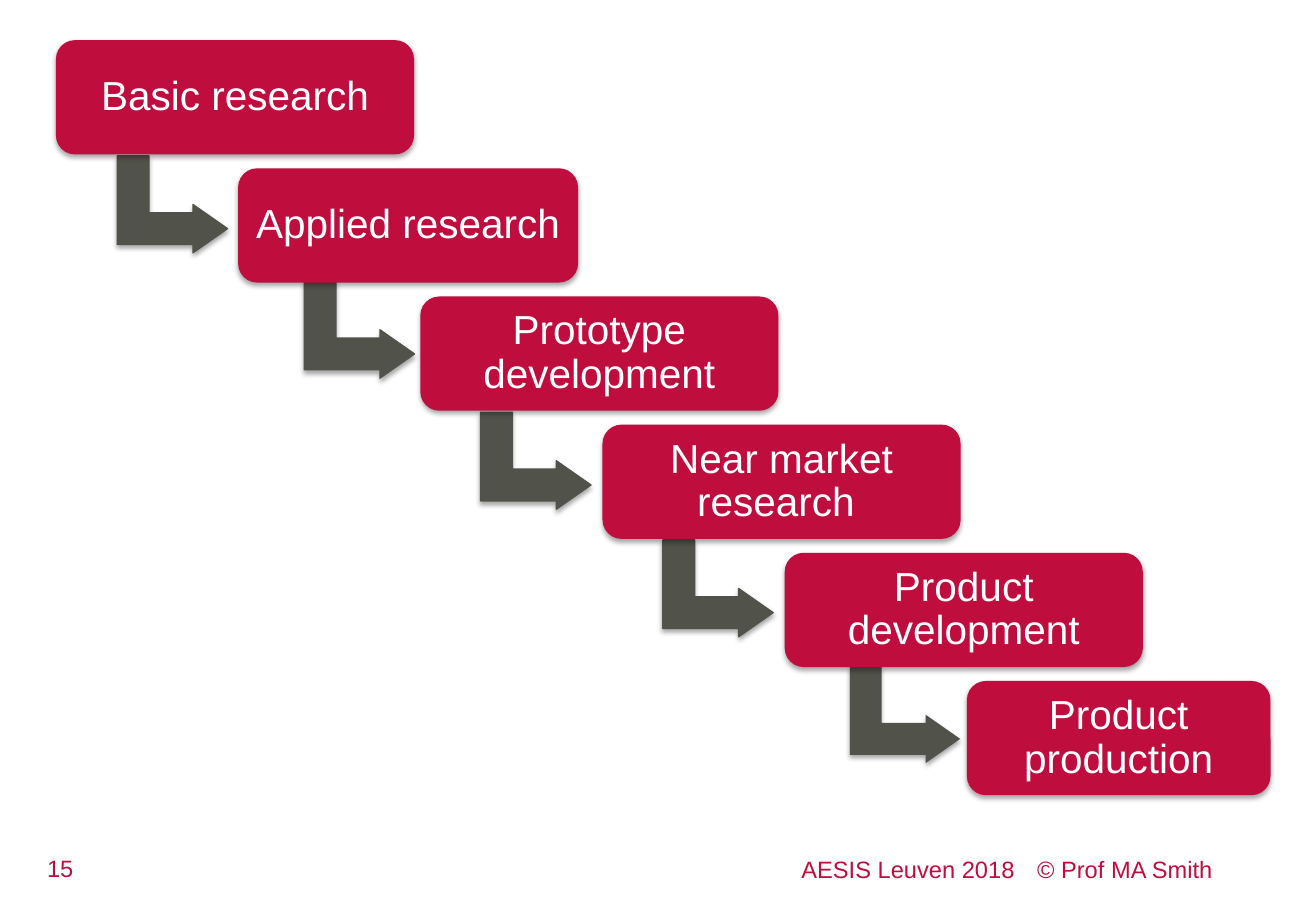
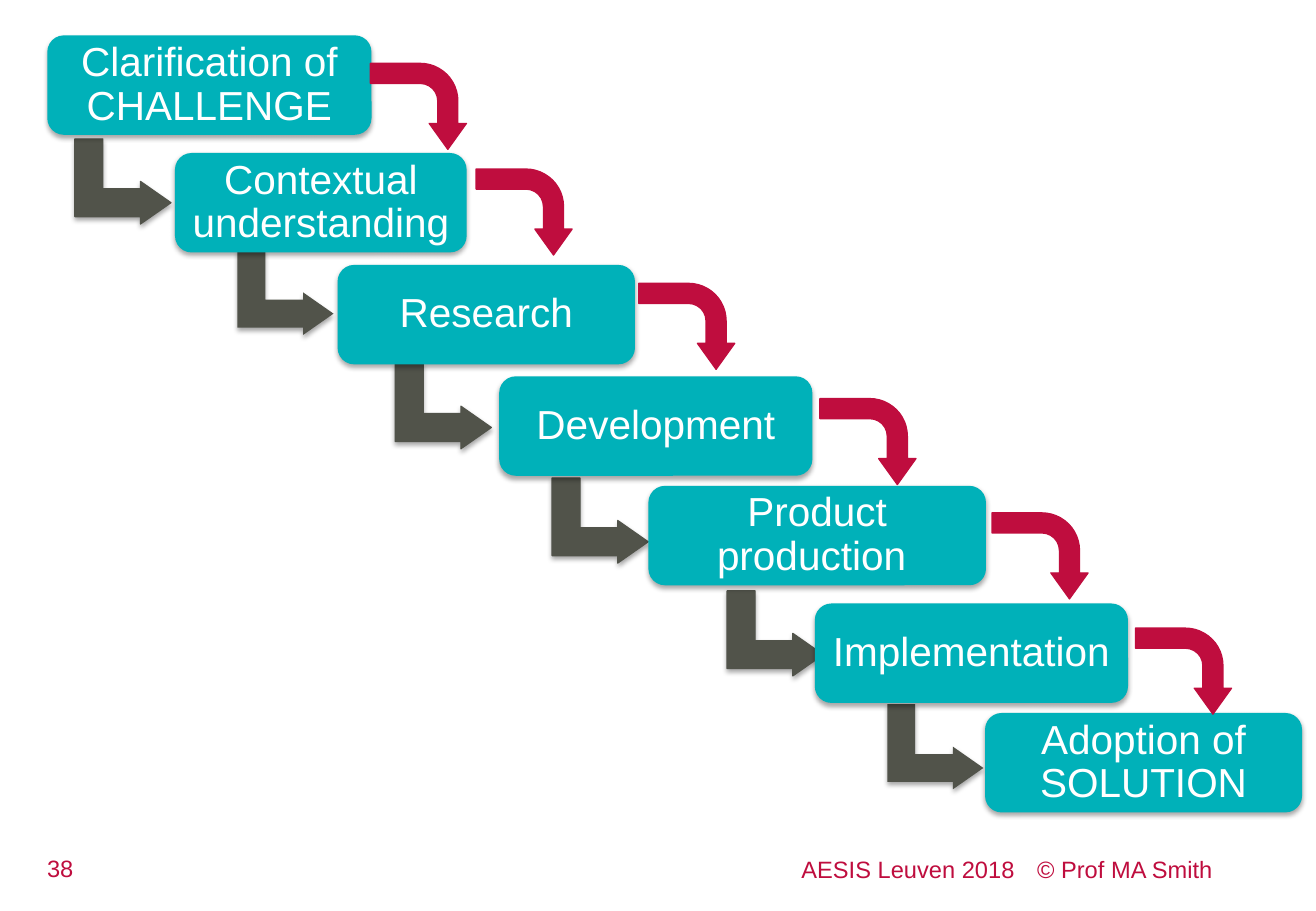
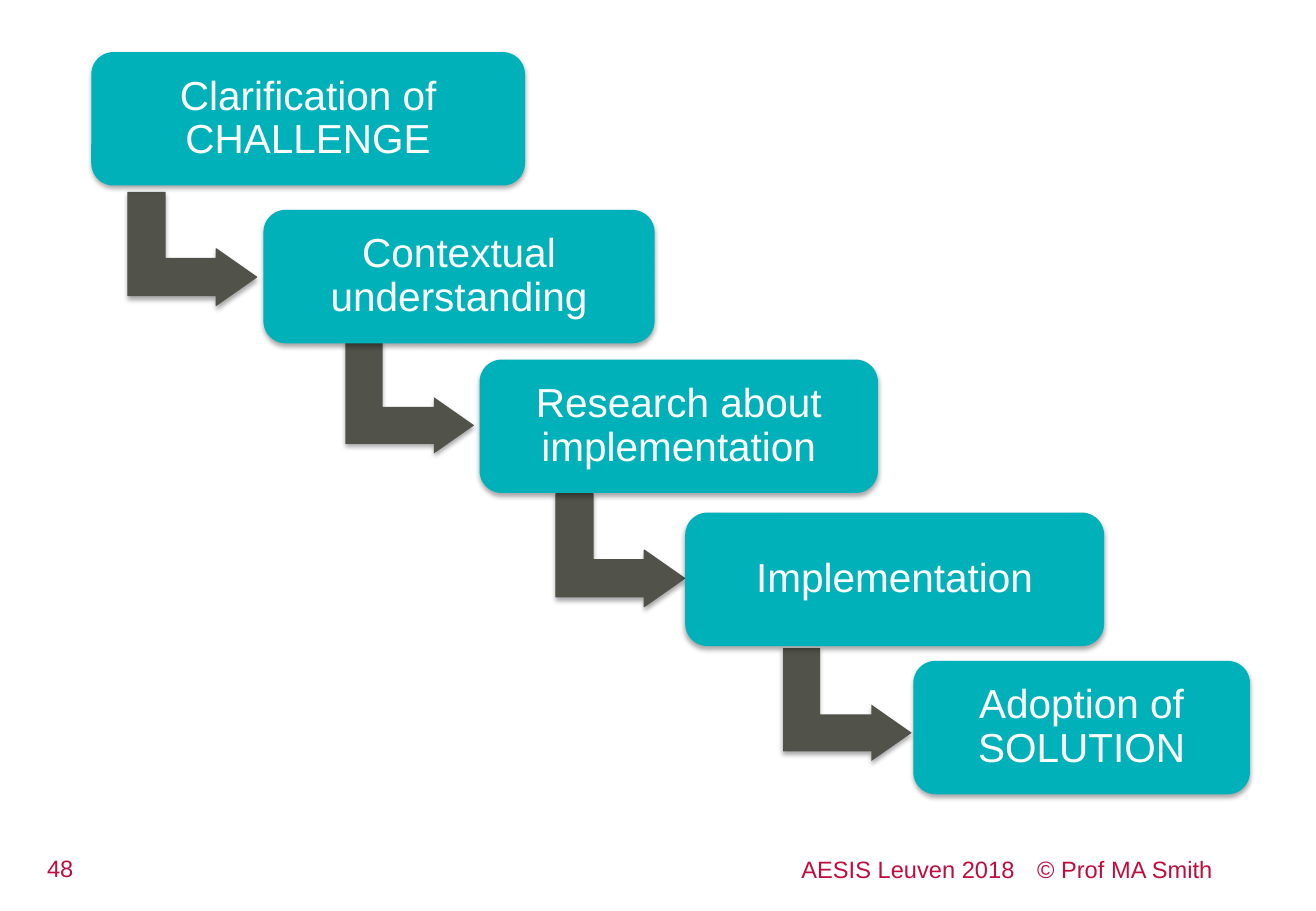
from lxml.etree import SubElement
from pptx import Presentation
from pptx.dml.color import RGBColor
from pptx.enum.shapes import MSO_SHAPE
from pptx.enum.text import MSO_ANCHOR, PP_ALIGN
from pptx.oxml.ns import qn
from pptx.util import Cm, Pt

COLORS = {"red": "BF0D3E", "teal": "00B1B9", "grey": "51534A",
          "white": "FFFFFF", "black": "000000"}
FONT = "Arial"
CONFERENCE, COPYRIGHT = "AESIS Leuven 2018", "© Prof MA Smith"
ELBOW_BENDS = (0.328, 0.25, 0.358)
CURVE_BENDS = (0.234, 0.217, 0.302, 0.438)
CURVE_SIZE = (1.8, 2.01)

# Content, in cm. Steps: label, left, top, width.
# Elbows (one after each step but the last): left, top, outlined.
STAIRS = [
    {"page": "15", "color": "red", "step_height": 2.39,
     "steps": [(label, 1.17 + 3.81 * i, 0.84 + 2.68 * i, width)
               for i, (label, width) in enumerate([
                   ("Basic research", 7.49),
                   ("Applied research", 7.11),
                   ("Prototype development", 7.49),
                   ("Near market research ", 7.49),
                   ("Product development", 7.49),
                   ("Product production", 6.35)])],
     "elbow_size": (2.03, 2.31),
     "elbows": [(2.59, 3.12, True), (6.5, 5.74, True), (10.19, 8.48, True),
                (14, 11.15, True), (17.91, 13.79, False)],
     "curves": []},
    {"page": "38", "color": "teal", "step_height": 2.08,
     "steps": [("Clarification of CHALLENGE", 0.99, 0.74, 6.78),
               ("Contextual understanding", 3.66, 3.2, 6.1),
               ("Research", 7.06, 5.54, 6.22),
               ("Development", 10.44, 7.87, 6.55),
               ("Product production ", 13.56, 10.16, 7.06),
               ("Implementation", 17.04, 12.62, 6.55),
               ("Adoption of SOLUTION", 20.6, 14.91, 6.63)],
     "elbow_size": (1.78, 2.01),
     "elbows": [(1.68, 2.79, True), (5.08, 5.11, False), (8.38, 7.49, True),
                (11.66, 9.88, True), (15.32, 12.24, True), (18.67, 14.61, False)],
     "curves": [(7.85, 1.22), (10.06, 3.43), (13.46, 5.82),
                (17.25, 8.23), (20.85, 10.62), (23.85, 13.03)]},
    {"page": "48", "color": "teal", "step_height": 2.79,
     "steps": [("Clarification of CHALLENGE", 1.91, 1.09, 9.07),
               ("Contextual understanding", 5.51, 4.39, 8.18),
               ("Research about implementation", 10.03, 7.52, 8.33),
               ("Implementation", 14.33, 10.72, 8.76),
               ("Adoption of SOLUTION", 19.1, 13.82, 7.04)],
     "elbow_size": (2.36, 2.69),
     "elbows": [(2.84, 3.86, True), (7.39, 6.96, False),
                (11.79, 10.16, True), (16.54, 13.39, False)],
     "curves": []},
]


def rgb(color):
    return RGBColor.from_string(COLORS[color])


def style(paragraph, size, color, align):
    paragraph.alignment = align
    paragraph.font.name = FONT
    paragraph.font.size = Pt(size)
    paragraph.font.color.rgb = rgb(color)


def add_shadow(shape):
    effects = shape._element.spPr.find(qn("a:effectLst"))
    shadow = SubElement(effects, qn("a:outerShdw"), blurRad=str(Pt(3.1)),
                        dist=str(Pt(1.8)), dir="5400000", rotWithShape="0")
    black = SubElement(shadow, qn("a:srgbClr"), val=COLORS["black"])
    SubElement(black, qn("a:alpha"), val="35000")


def add_block(slide, kind, place, color, bends, outlined=False, shadow=True):
    block = slide.shapes.add_shape(kind, *map(Cm, place))
    for i, bend in enumerate(bends):
        block.adjustments[i] = bend
    block.fill.solid()
    block.fill.fore_color.rgb = rgb(color)
    if outlined:
        block.line.color.rgb = rgb(color)
        block.line.width = Pt(0.75)
    else:
        block.line.fill.background()
    block.shadow.inherit = False
    if shadow:
        add_shadow(block)
    return block


def add_step(slide, label, place, color):
    step = add_block(slide, MSO_SHAPE.ROUNDED_RECTANGLE, place, color, [0.167])
    frame = step.text_frame
    frame.word_wrap = True
    frame.vertical_anchor = MSO_ANCHOR.MIDDLE
    frame.margin_left = frame.margin_right = Cm(0.25)
    frame.margin_top = frame.margin_bottom = Cm(0.25)
    paragraph = frame.paragraphs[0]
    paragraph.text = label
    paragraph.line_spacing = 0.9
    style(paragraph, 24, "white", PP_ALIGN.CENTER)


def add_footer(slide, page):
    number = slide.shapes.add_textbox(Cm(0.36), Cm(17.73), Cm(1.8), Cm(0.86))
    number.text_frame.word_wrap = True
    number.text_frame.text = page
    style(number.text_frame.paragraphs[0], 14, "red", PP_ALIGN.CENTER)

    credit = slide.shapes.add_textbox(Cm(16.76), Cm(17.75), Cm(9), Cm(0.86))
    frame = credit.text_frame
    frame.word_wrap = True
    frame.margin_left = frame.margin_right = 0
    paragraph = frame.paragraphs[0]
    paragraph.text = f"{CONFERENCE}\t{COPYRIGHT}"
    tabs = SubElement(paragraph._p.get_or_add_pPr(), qn("a:tabLst"))
    SubElement(tabs, qn("a:tab"), pos=str(Cm(4.93)), algn="l")
    style(paragraph, 14, "red", PP_ALIGN.LEFT)


def add_stairs(slide, stairs):
    # Each elbow lies behind the step it leaves
    for i, (label, left, top, width) in enumerate(stairs["steps"]):
        if i < len(stairs["elbows"]):
            x, y, outlined = stairs["elbows"][i]
            elbow = add_block(slide, MSO_SHAPE.BENT_UP_ARROW,
                              (x, y, *stairs["elbow_size"]), "grey",
                              ELBOW_BENDS, outlined)
            elbow.rotation = 90
        add_step(slide, label, (left, top, width, stairs["step_height"]),
                 stairs["color"])
    for x, y in stairs["curves"]:
        curve = add_block(slide, MSO_SHAPE.BENT_ARROW, (x, y, *CURVE_SIZE),
                          "red", CURVE_BENDS, outlined=True, shadow=False)
        curve.rotation = 90


def main():
    deck = Presentation()
    deck.slide_width, deck.slide_height = Cm(27.52), Cm(19.05)
    for stairs in STAIRS:
        slide = deck.slides.add_slide(deck.slide_layouts[6])
        add_footer(slide, stairs["page"])
        add_stairs(slide, stairs)
    deck.save("out.pptx")


if __name__ == "__main__":
    main()
